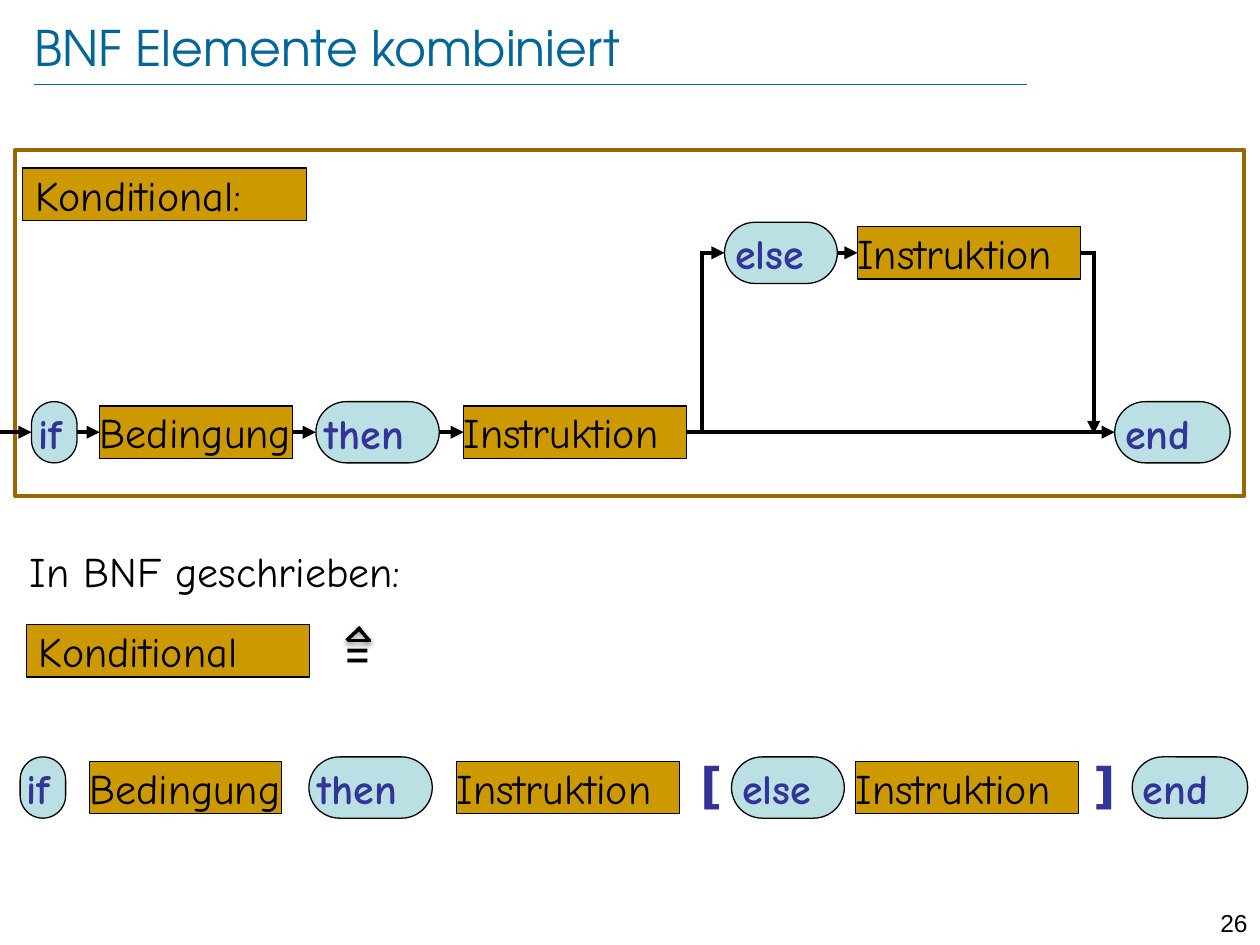
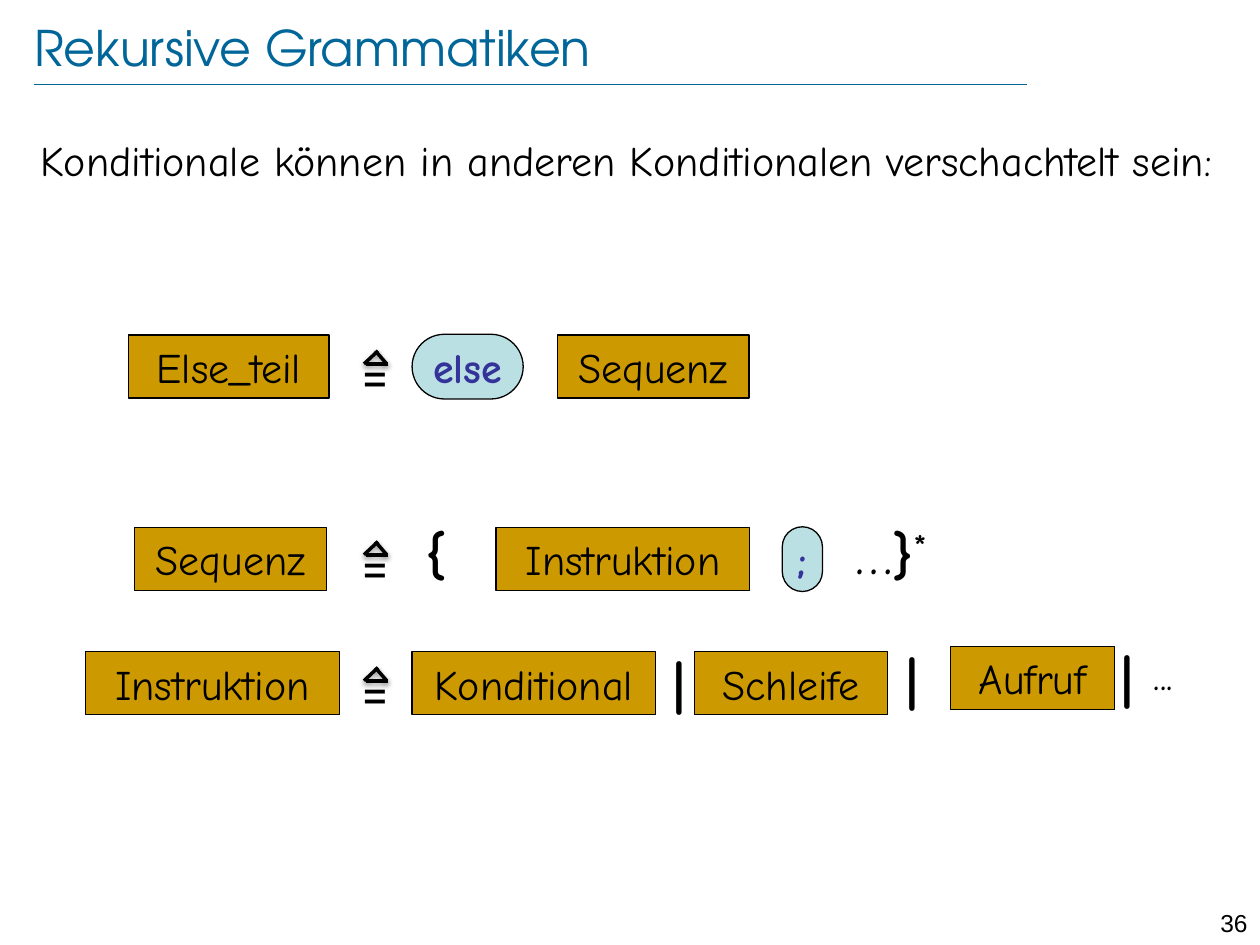
from lxml import etree
from pptx import Presentation
from pptx.dml.color import RGBColor as Rgb
from pptx.enum.shapes import MSO_CONNECTOR as Connector, MSO_SHAPE as Preset
from pptx.enum.text import MSO_ANCHOR as Anchor, PP_ALIGN as Align
from pptx.oxml.ns import qn
from pptx.util import Pt

COLORS = {
    "title": "006699",
    "text": "000000",
    "keyword": "333399",
    "rule": "CC9900",
    "terminal": "BBE0E3",
    "frame": "996600",
}
HAND, TITLE, NUMBER = "Comic Neue", "TeX Gyre Adventor", "Arial"


def color(name):
    return Rgb.from_string(COLORS[name])


# ---- Text ----

def style_span(span, size, font, tint="text", bold=False):
    span.font.size = Pt(size)
    span.font.name = font
    span.font.color.rgb = color(tint)
    span.font.bold = bold


def add_text(page, text, left, top, width, height, size=24, font=HAND, tint="text",
             bold=False, align=Align.LEFT, wrap=True):
    box = page.shapes.add_textbox(Pt(left), Pt(top), Pt(width), Pt(height))
    box.text_frame.word_wrap = wrap
    box.text_frame.text = text
    para = box.text_frame.paragraphs[0]
    para.alignment = align
    style_span(para.runs[0], size, font, tint, bold)
    return box


def add_mark(page, text, left, top, width, size=32, bold=True):
    """Centred grammar symbol on one line."""
    return add_text(page, text, left, top, width, 46, size, bold=bold,
                    align=Align.CENTER, wrap=False)


def zero_margins(frame):
    frame.margin_left = frame.margin_right = 0
    frame.margin_top = frame.margin_bottom = 0


# ---- Lines ----

def add_line(page, start, end, width=2.5, tint="text", arrow=False, shadow=False):
    line = page.shapes.add_connector(Connector.STRAIGHT, *map(Pt, start + end))
    line.line.width = Pt(width)
    line.line.color.rgb = color(tint)
    if arrow:
        tail = etree.SubElement(line.line._get_or_add_ln(), qn("a:tailEnd"))
        tail.set("type", "triangle")
    effects = etree.SubElement(line._element.spPr, qn("a:effectLst"))
    if shadow:
        outer = etree.SubElement(effects, qn("a:outerShdw"), blurRad="40000",
                                 dist="20000", dir="5400000", rotWithShape="0")
        black = etree.SubElement(outer, qn("a:srgbClr"), val=COLORS["text"])
        etree.SubElement(black, qn("a:alpha"), val="38000")


def add_defined_as(page, left, top):
    """Equals sign with a small triangle above it."""
    add_text(page, "=", left, top, 30, 41, size=28, font="Roboto")
    for x1, y1, x2, y2 in ((15, 5.5, 21.5, 13), (16.5, 5.5, 8.5, 13), (22.5, 13, 9.5, 13)):
        add_line(page, (left + x1, top + y1), (left + x2, top + y2), width=2, shadow=True)


# ---- Grammar symbols ----

def add_symbol(page, text, left, middle, width, height, terminal, inset=None):
    """Box for a rule or capsule for a keyword; centred unless an inset is given."""
    shape = page.shapes.add_shape(
        Preset.ROUNDED_RECTANGLE if terminal else Preset.RECTANGLE,
        Pt(left), Pt(middle - height / 2), Pt(width), Pt(height))
    if terminal:
        shape.adjustments[0] = 0.5
    shape.shadow.inherit = False
    shape.fill.solid()
    shape.fill.fore_color.rgb = color("terminal" if terminal else "rule")
    shape.line.color.rgb = color("text")
    shape.line.width = Pt(0.75)
    frame = shape.text_frame
    frame.text = text
    zero_margins(frame)
    frame.vertical_anchor = Anchor.MIDDLE
    frame.word_wrap = inset is not None
    frame.margin_left = Pt(inset or 0)
    para = frame.paragraphs[0]
    para.alignment = Align.CENTER if inset is None else Align.LEFT
    style_span(para.runs[0], 24, HAND, "keyword" if terminal else "text", terminal)


SYNTAX_WIDTHS = {"if": 26, "then": 70.5, "else": 64.5, "end": 66, "Bedingung": 110,
                 "Instruktion": 127.5}
KEYWORDS = ("if", "then", "else", "end")


def add_syntax_row(page, middle, symbols):
    """Left-aligned symbols of a conditional; returns the (left, right) of each."""
    edges = []
    for text, left in symbols:
        width = SYNTAX_WIDTHS[text]
        terminal = text in KEYWORDS
        add_symbol(page, text, left, middle, width, 35 if terminal else 30, terminal,
                   inset=1 if text in ("else", "end") else 0)
        edges.append((left, left + width))
    return edges


def add_rule_row(page, middle, symbols):
    for text, left, width in symbols:
        terminal = text in ("else", ";")
        add_symbol(page, text, left, middle, width, 37 if terminal else 36, terminal)


# ---- Slides ----

def add_page(deck, title, number):
    page = deck.slides.add_slide(deck.slide_layouts[6])
    add_line(page, (19.5, 48), (587, 48), width=0.25, tint="title")
    heading = add_text(page, title, 19.5, 9.5, 625.5, 34.5, 28, TITLE, "title")
    zero_margins(heading.text_frame)
    heading.text_frame.vertical_anchor = Anchor.MIDDLE
    add_text(page, number, 680.5, 515.5, 39.5, 17, 14, NUMBER, align=Align.RIGHT)
    return page


def add_combined_page(deck):
    page = add_page(deck, "BNF Elemente kombiniert", "26")
    frame = page.shapes.add_shape(Preset.RECTANGLE, Pt(8.75), Pt(85.5), Pt(702), Pt(198))
    frame.shadow.inherit = False
    frame.fill.background()
    frame.line.color.rgb = color("frame")
    frame.line.width = Pt(2.25)
    add_symbol(page, "Konditional:", 13, 111, 162, 30, False, inset=7.2)

    # Syntax diagram: main path and optional branch
    main_y, branch_y, fork_x, join_x = 247, 144.5, 401.25, 625
    main_path = add_syntax_row(page, main_y, [
        ("if", 18), ("Bedingung", 57), ("then", 180.5), ("Instruktion", 265), ("end", 637)])
    branch = add_syntax_row(page, branch_y, [("else", 414), ("Instruktion", 490)])
    for y, start, edges in ((main_y, 0, main_path), (branch_y, fork_x, branch)):
        for left, right in edges:
            add_line(page, (start, y), (left, y), arrow=True)
            start = right
    add_line(page, (fork_x, main_y), (fork_x, branch_y - 1.25))
    add_line(page, (branch[-1][1], branch_y), (join_x + 1.25, branch_y))
    add_line(page, (join_x, branch_y), (join_x, main_y + 1), arrow=True)

    # The same rule as BNF
    add_text(page, "In BNF geschrieben:", 10, 308, 271.5, 36)
    add_symbol(page, "Konditional", 15, 372, 162, 30, False, inset=7.2)
    add_defined_as(page, 189.5, 353)
    add_syntax_row(page, 450, [
        ("if", 11.5), ("Bedingung", 51), ("then", 176.5), ("Instruktion", 261),
        ("else", 418), ("Instruktion", 489), ("end", 647)])
    for bracket, left in (("[", 393), ("]", 617.5)):
        add_text(page, bracket, left, 427.5, 70.5, 41, 28, "DejaVu Sans", "keyword", True)


def add_recursive_page(deck):
    page = add_page(deck, "Rekursive Grammatiken", "36")
    add_text(page, "Konditionale können in anderen Konditionalen verschachtelt sein:",
             16, 73.5, 686, 47)

    # Rules
    add_rule_row(page, 209.5, [("Else_teil", 73.5, 114.5), ("else", 235.5, 63.5),
                               ("Sequenz", 318.5, 109.5)])
    add_rule_row(page, 319.5, [("Sequenz", 77, 109.5), ("Instruktion", 283.5, 145),
                               (";", 447, 23)])
    add_rule_row(page, 390.5, [("Instruktion", 49, 145), ("Konditional", 235.5, 139),
                               ("Schleife", 397, 110)])
    add_rule_row(page, 387.5, [("Aufruf", 543, 94)])
    for top in (195, 304, 376):
        add_defined_as(page, 199.5, top)

    # Repetition and alternatives
    add_mark(page, "{", 235.5, 292.5, 27.5)
    repeat = add_mark(page, "…", 479, 292.5, 60, bold=False)
    para = repeat.text_frame.paragraphs[0]
    for text in ("}", "*"):
        span = para.add_run()
        span.text = text
        style_span(span, 32, HAND, bold=True)
    span._r.get_or_add_rPr().set("baseline", "30000")
    for left, top in ((374.5, 368), (507.5, 366), (630.5, 365)):
        add_mark(page, "|", left, top, 28)
    add_mark(page, "...", 648.5, 367, 32.5, size=24, bold=False)


def main():
    deck = Presentation()
    deck.slide_width, deck.slide_height = Pt(720), Pt(540)
    add_combined_page(deck)
    add_recursive_page(deck)
    deck.save("out.pptx")


if __name__ == "__main__":
    main()
